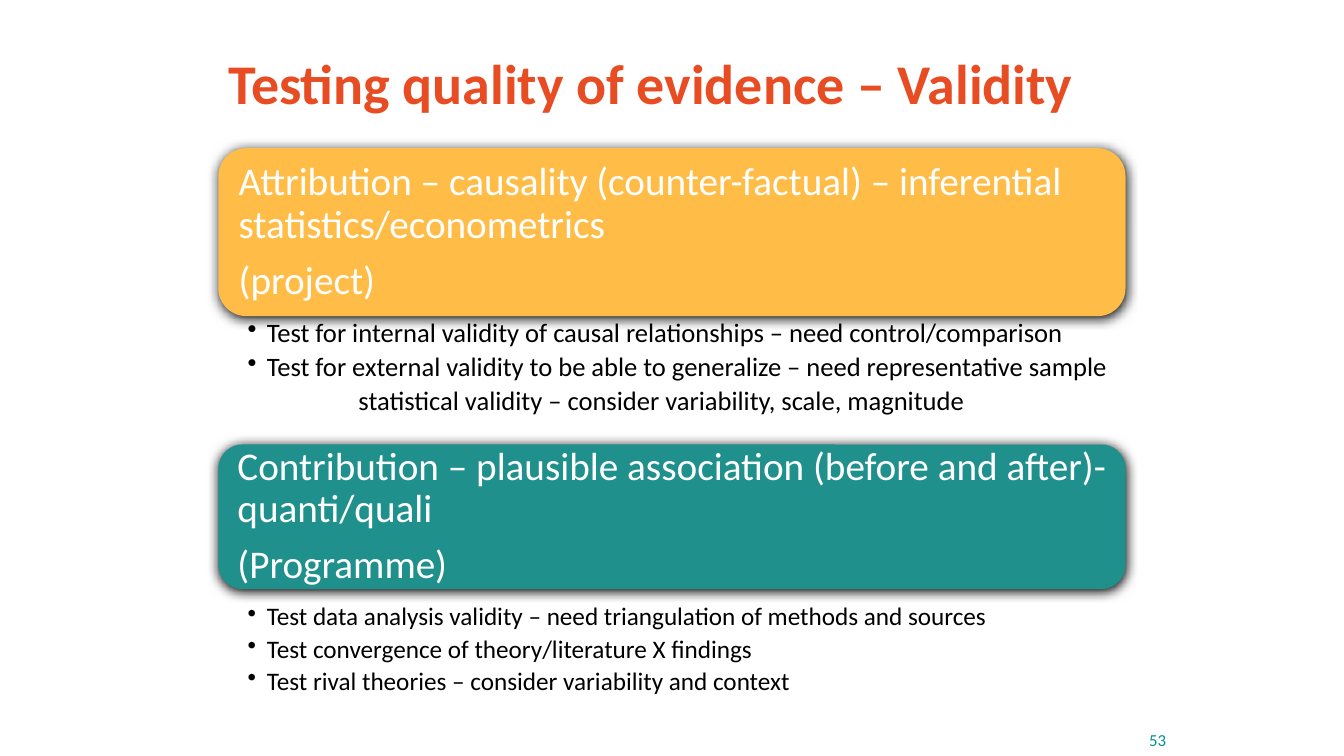
"""Build the slide on testing the quality of evidence."""
from pptx import Presentation, util as u
from pptx.dml.color import RGBColor
from pptx.enum import shapes, text
from pptx.oxml import parse_xml
from pptx.oxml.ns import nsdecls, qn

ORANGE = RGBColor(0xE8, 0x4C, 0x22)
AMBER = RGBColor(0xFF, 0xBD, 0x47)
TEAL = RGBColor(0x20, 0x90, 0x8D)
PAGE_TEAL = RGBColor(0x00, 0x91, 0x93)
WHITE = RGBColor(0xFF, 0xFF, 0xFF)
BLACK = RGBColor(0x00, 0x00, 0x00)

FONT = "Calibri"
CELL = u.Inches(1 / 6)
LEFT, WIDTH = 13, 54
SECTIONS = [
    {
        "heading": ["Attribution – causality (counter-factual) – inferential statistics/econometrics",
                    "(project)"],
        "fill": AMBER, "row": 8.82, "rows": 10,
        "tests": ["Test for internal validity of causal relationships – need control/comparison",
                  "Test for external validity to be able to generalize – need representative sample"],
        "remark": "statistical validity – consider variability, scale, magnitude",
        "tests_row": 18.84, "size": 19, "right": 0.15,
    },
    {
        "heading": ["Contribution – plausible association (before and after)- quanti/quali",
                    "(Programme)"],
        "fill": TEAL, "row": 26.46, "rows": 8.6,
        "tests": ["Test data analysis validity – need triangulation of methods and sources",
                  "Test convergence of theory/literature X findings",
                  "Test rival theories – consider variability and context"],
        "remark": None,
        "tests_row": 35.78, "size": 18, "right": 0.18,
    },
]


def place(col, row, cols, rows):
    """Return left, top, width and height for a block of grid cells."""
    return [round(n * CELL) for n in (col, row, cols, rows)]


def write(frame, lines, size, color, after=0, spacing=0.9, align=text.PP_ALIGN.LEFT, bold=False):
    """Fill a text frame with evenly formatted paragraphs."""
    frame.word_wrap = True
    frame.text = "\n".join(lines)
    for paragraph in frame.paragraphs:
        paragraph.alignment = align
        paragraph.line_spacing = spacing
        paragraph.space_after = u.Pt(round(size * after, 1))
        for run in paragraph.runs:
            run.font.name = FONT
            run.font.size = u.Pt(size)
            run.font.bold = bold
            run.font.color.rgb = color


def set_margins(frame, left, top, right, bottom):
    """Set the text frame margins in inches."""
    frame.margin_left, frame.margin_top = u.Inches(left), u.Inches(top)
    frame.margin_right, frame.margin_bottom = u.Inches(right), u.Inches(bottom)


def indent(paragraph, left, first=0, bullet=None):
    """Indent a paragraph in inches, with a bullet if one is given."""
    properties = paragraph._p.get_or_add_pPr()
    properties.set("marL", str(u.Inches(left)))
    properties.set("indent", str(u.Inches(first)))
    if bullet:
        properties.append(parse_xml(f'<a:buChar {nsdecls("a")} char="{bullet}"/>'))


def add_label(slide, area, label, size, color, **style):
    """Add a vertically centred single-line label."""
    frame = slide.shapes.add_textbox(*place(*area)).text_frame
    frame.vertical_anchor = text.MSO_ANCHOR.MIDDLE
    write(frame, [label], size, color, **style)


def add_banner(slide, section):
    """Add a rounded heading banner with a soft shadow."""
    area = place(LEFT, section["row"], WIDTH, section["rows"])
    banner = slide.shapes.add_shape(shapes.MSO_SHAPE.ROUNDED_RECTANGLE, *area)
    banner.fill.solid()
    banner.fill.fore_color.rgb = section["fill"]
    banner.line.fill.background()
    banner.shadow.inherit = False
    banner._element.spPr.find(qn("a:effectLst")).append(parse_xml(
        f'<a:outerShdw {nsdecls("a")} blurRad="{u.Pt(8.5)}" dist="{u.Pt(1)}" dir="5400000" '
        'rotWithShape="0"><a:srgbClr val="000000"/></a:outerShdw>'))
    frame = banner.text_frame
    set_margins(frame, 0.12, 0.12, 0.12, 0.12)
    frame.vertical_anchor = text.MSO_ANCHOR.MIDDLE
    write(frame, section["heading"], 28, WHITE, after=0.35)


def add_tests(slide, section):
    """Add the bulleted tests and the indented remark of a section."""
    frame = slide.shapes.add_textbox(*place(LEFT, section["tests_row"], WIDTH, 6.4)).text_frame
    set_margins(frame, 0.29, 0.03, section["right"], 0.03)
    remark = [section["remark"]] if section["remark"] else []
    write(frame, section["tests"] + remark, section["size"], BLACK, after=0.2)
    count = len(section["tests"])
    for paragraph in frame.paragraphs[:count]:
        indent(paragraph, 0.19, -0.19, "•")
    for paragraph in frame.paragraphs[count:]:
        indent(paragraph, 1.1)


def main():
    """Build and save the slide."""
    deck = Presentation()
    deck.slide_width, deck.slide_height = 80 * CELL, 45 * CELL
    slide = deck.slides.add_slide(deck.slide_layouts[6])
    add_label(slide, (LEFT, 2.16, 61.5, 6), "Testing quality of evidence – Validity", 40, ORANGE, bold=True)
    for section in SECTIONS:
        add_banner(slide, section)
        add_tests(slide, section)
    add_label(slide, (56, 43.1, 14, 1.9), "53", 12, PAGE_TEAL, spacing=1, align=text.PP_ALIGN.RIGHT)
    deck.save("out.pptx")


if __name__ == "__main__":
    main()
